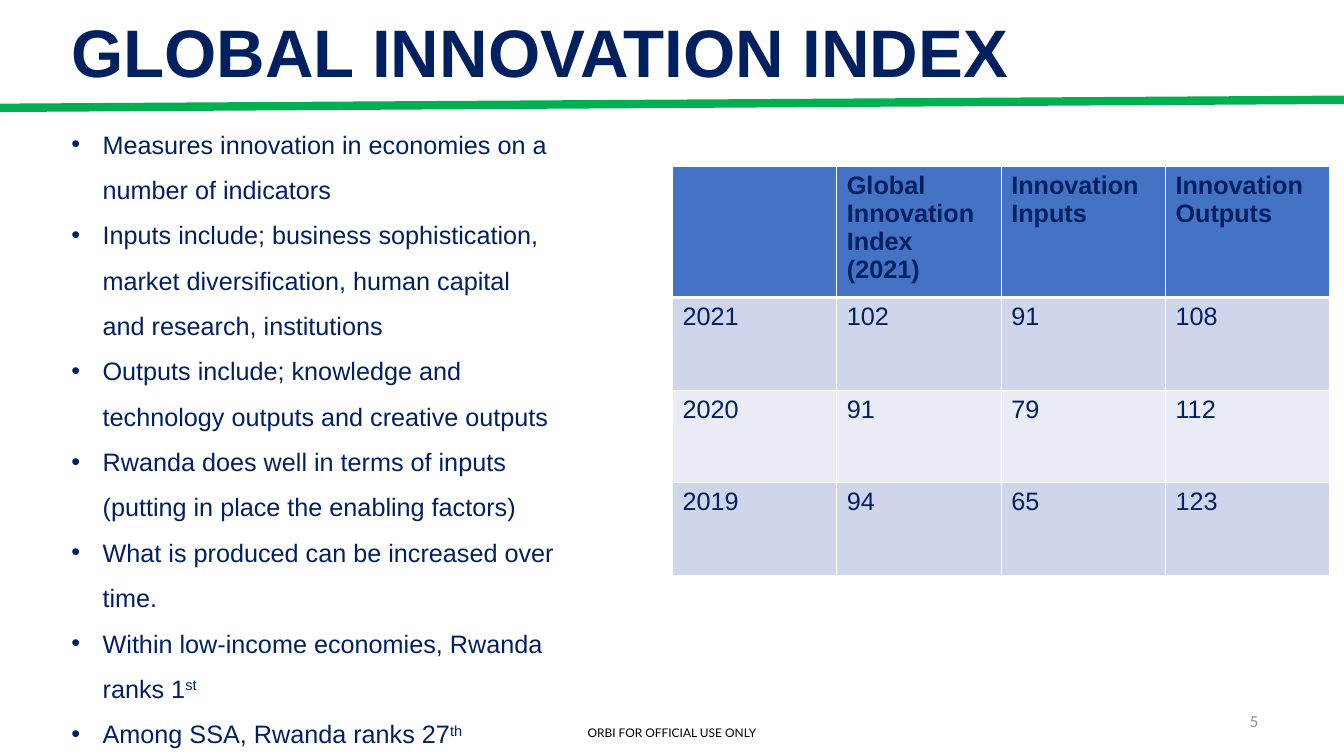
"""Build the Global Innovation Index slide."""
from dataclasses import dataclass

from lxml import etree
from pptx import Presentation
from pptx.dml.color import RGBColor
from pptx.enum.shapes import MSO_CONNECTOR as Connector
from pptx.enum.text import MSO_ANCHOR as Anchor, MSO_AUTO_SIZE as AutoSize, PP_ALIGN as Align
from pptx.oxml.ns import qn
from pptx.util import Inches, Pt

COLORS = {
    "navy": "002060", "green": "00B050", "gray": "8C8C8C", "black": "000000",
    "white": "FFFFFF", "header": "4472C4", "band": "CFD5EA", "light": "E9EBF5",
}
BODY_FORMAT = {"name": "Arial", "size": Pt(18), "bold": False}
HEADER_FORMAT = BODY_FORMAT | {"bold": True}
INDENT = Inches(0.31)


@dataclass(frozen=True)
class Label:
    text: str
    box: tuple[float, float, float, float]
    font: dict
    color: str
    paragraph: dict
    frame: dict


@dataclass(frozen=True)
class Bullet:
    text: str
    superscript: str = ""


LABELS = [
    Label("ORBI FOR OFFICIAL USE ONLY", (0, 7.15, 13.33, 0.24),
          {"name": "Lato", "size": Pt(8.5)}, "black",
          {"alignment": Align.CENTER}, {"auto_size": AutoSize.SHAPE_TO_FIT_TEXT}),
    Label("GLOBAL INNOVATION INDEX", (0.61, 0.06, 11.98, 0.99),
          {"name": "Arial", "size": Pt(48), "bold": True}, "navy",
          {"line_spacing": 0.9}, {"vertical_anchor": Anchor.MIDDLE}),
    Label("5", (9.58, 6.95, 3, 0.4),
          {"name": "Calibri", "size": Pt(12)}, "gray",
          {"alignment": Align.RIGHT}, {"vertical_anchor": Anchor.MIDDLE}),
]
BULLETS = [
    Bullet("Measures innovation in economies on a number of indicators"),
    Bullet("Inputs include; business sophistication, market diversification, "
           "human capital and research, institutions"),
    Bullet("Outputs include; knowledge and technology outputs and creative outputs"),
    Bullet("Rwanda does well in terms of inputs (putting in place the enabling factors)"),
    Bullet("What is produced can be increased over time."),
    Bullet("Within low-income economies, Rwanda ranks 1", "st"),
    Bullet("Among SSA, Rwanda ranks 27", "th"),
]
RANKINGS = [
    ("", "Global Innovation Index (2021)", "Innovation Inputs", "Innovation Outputs"),
    ("2021", "102", "91", "108"),
    ("2020", "91", "79", "112"),
    ("2019", "94", "65", "123"),
]


def rgb(name: str) -> RGBColor:
    """Look up a named colour."""
    return RGBColor.from_string(COLORS[name])


def apply_format(target, values: dict) -> None:
    """Set every attribute in a dict of format values."""
    for name, value in values.items():
        setattr(target, name, value)


def add_run(paragraph, text: str, font: dict, color: str = "navy"):
    """Add a formatted run to a paragraph."""
    run = paragraph.add_run()
    run.text = text
    apply_format(run.font, font)
    run.font.color.rgb = rgb(color)
    return run


def add_frame(slide, box: tuple, values: dict):
    """Add a wrapping text box and return its text frame."""
    frame = slide.shapes.add_textbox(*map(Inches, box)).text_frame
    apply_format(frame, {"word_wrap": True} | values)
    return frame


def add_label(slide, label: Label) -> None:
    """Add a single-line label."""
    paragraph = add_frame(slide, label.box, label.frame).paragraphs[0]
    apply_format(paragraph, label.paragraph)
    add_run(paragraph, label.text, label.font, label.color)


def add_rule(slide) -> None:
    """Add the slightly rising green line below the title."""
    rule = slide.shapes.add_connector(
        Connector.STRAIGHT, *map(Inches, (0, 1.07, 13.33, 0.99)))
    rule.line.color.rgb = rgb("green")
    rule.line.width = Pt(6)
    etree.SubElement(rule._element.spPr, qn("a:effectLst"))


def add_bullets(slide, bullets: list[Bullet]) -> None:
    """Add the bulleted list with its raised ordinal endings."""
    frame = add_frame(slide, (0.61, 1.08, 5.01, 6.77),
                      {"auto_size": AutoSize.SHAPE_TO_FIT_TEXT})
    for index, bullet in enumerate(bullets):
        paragraph = frame.add_paragraph() if index else frame.paragraphs[0]
        paragraph.line_spacing = 1.5
        properties = paragraph._p.get_or_add_pPr()
        properties.set("marL", str(INDENT))
        properties.set("indent", str(-INDENT))
        etree.SubElement(properties, qn("a:buFont"), typeface="Arial")
        etree.SubElement(properties, qn("a:buChar"), char="•")
        add_run(paragraph, bullet.text, BODY_FORMAT)
        if bullet.superscript:
            run = add_run(paragraph, bullet.superscript, BODY_FORMAT)
            run._r.get_or_add_rPr().set("baseline", "30000")


def add_borders(cell, widths: dict[str, int]) -> None:
    """Draw white borders, with a width in points for each side."""
    properties = cell._tc.get_or_add_tcPr()
    for index, (side, width) in enumerate(widths.items()):
        line = etree.Element(qn(f"a:ln{side}"), w=str(Pt(width)))
        fill = etree.SubElement(line, qn("a:solidFill"))
        etree.SubElement(fill, qn("a:srgbClr"), val=COLORS["white"])
        properties.insert(index, line)


def add_rankings(slide, rankings: list[tuple]) -> None:
    """Add the banded table of yearly rankings."""
    table = slide.shapes.add_table(
        len(rankings), len(rankings[0]), *map(Inches, (6.67, 1.65, 6.51, 4))).table
    for column in table.columns:
        column.width = Inches(1.63)
    for row_index, values in enumerate(rankings):
        is_header = row_index == 0
        table.rows[row_index].height = Inches(1.24 if is_header else 0.92)
        fill = "header" if is_header else ("light", "band")[row_index % 2]
        top = 3 if row_index == 1 else 1
        bottom = 3 if is_header else 1
        for column_index, value in enumerate(values):
            cell = table.cell(row_index, column_index)
            cell.fill.solid()
            cell.fill.fore_color.rgb = rgb(fill)
            add_borders(cell, {"L": 1, "R": 1, "T": top, "B": bottom})
            if value:
                add_run(cell.text_frame.paragraphs[0], value,
                        HEADER_FORMAT if is_header else BODY_FORMAT)


def main() -> None:
    """Build and save the presentation."""
    presentation = Presentation()
    presentation.slide_width = Inches(13.33)
    presentation.slide_height = Inches(7.5)
    slide = presentation.slides.add_slide(presentation.slide_layouts[6])
    for label in LABELS:
        add_label(slide, label)
    add_rule(slide)
    add_bullets(slide, BULLETS)
    add_rankings(slide, RANKINGS)
    presentation.save("out.pptx")


if __name__ == "__main__":
    main()
